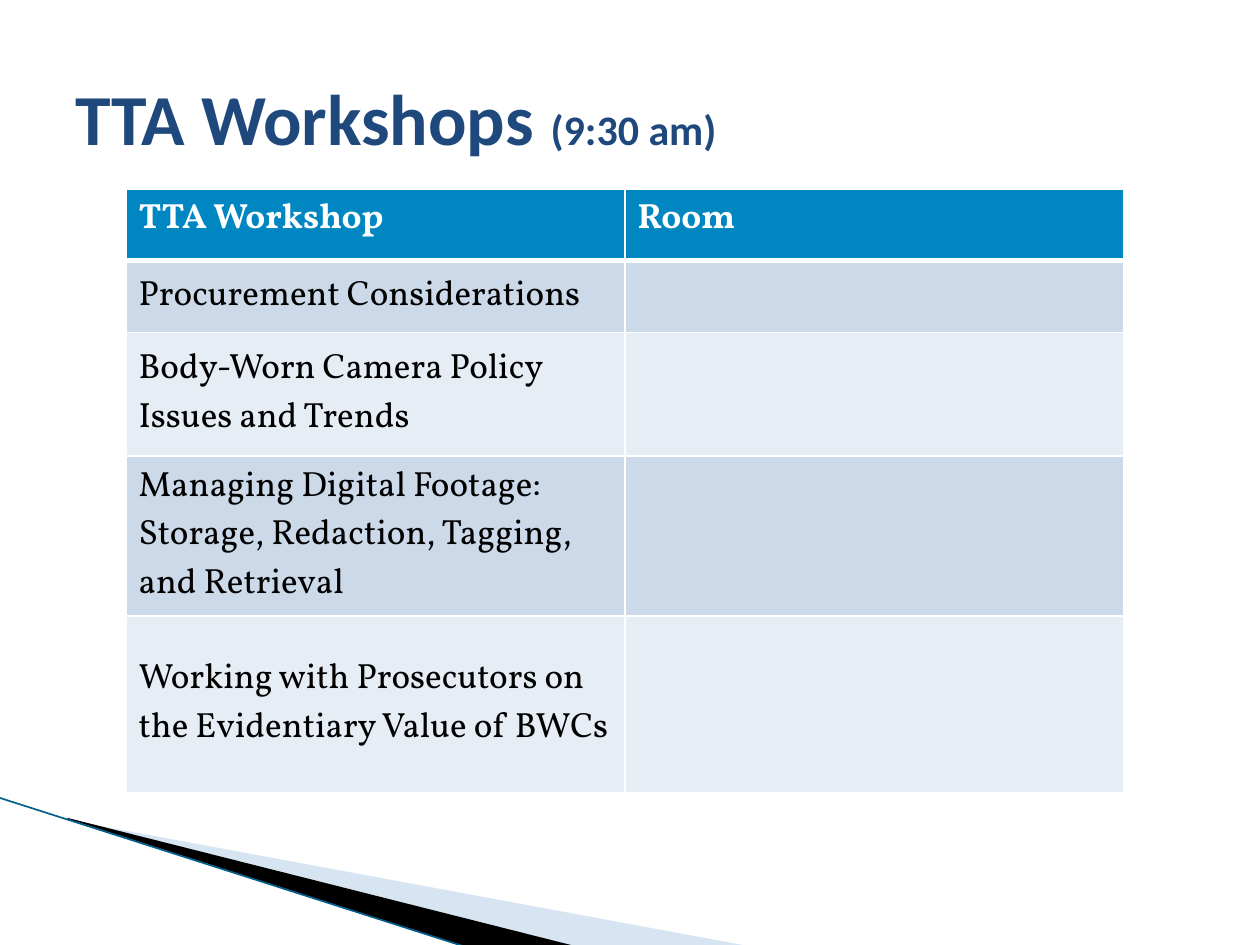
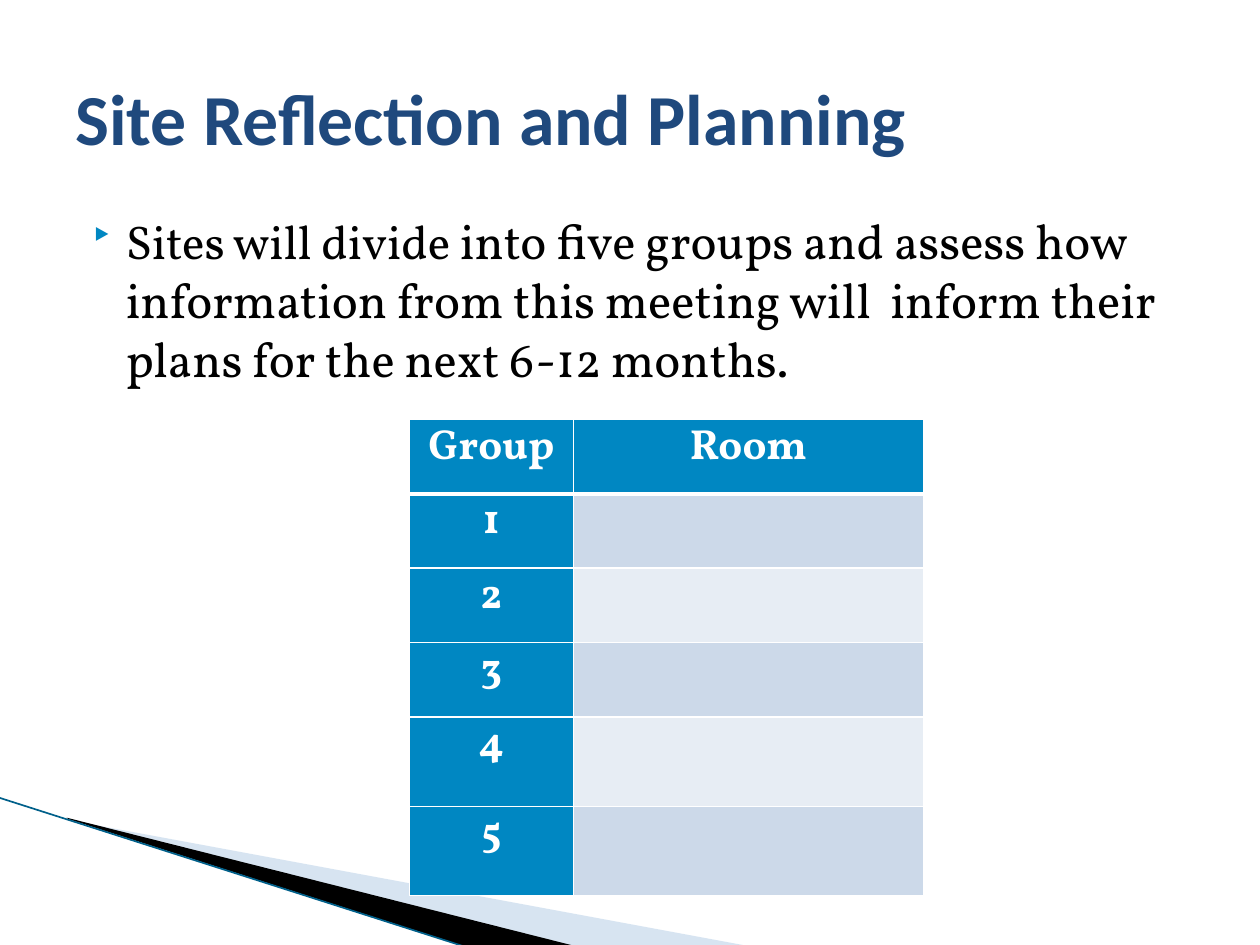
from lxml import etree
from pptx import Presentation
from pptx.dml.color import RGBColor
from pptx.enum.shapes import MSO_CONNECTOR
from pptx.enum.text import MSO_ANCHOR, PP_ALIGN
from pptx.oxml.ns import qn
from pptx.util import Inches, Pt

TOP, MIDDLE = MSO_ANCHOR.TOP, MSO_ANCHOR.MIDDLE
LEFT, CENTER = PP_ALIGN.LEFT, PP_ALIGN.CENTER
STRAIGHT = MSO_CONNECTOR.STRAIGHT

COLORS = {
    "title": "1F497D",
    "accent": "0087C2",
    "band_dark": "CCD9E9",
    "band_light": "E7EDF4",
    "wedge": "9DBDDE",
    "edge": "00608A",
    "black": "000000",
    "white": "FFFFFF",
}
TITLE_FONT, BODY_FONT = "Calibri", "Vollkorn"

WORKSHOPS = [
    "Procurement Considerations",
    "Body-Worn Camera Policy Issues and Trends",
    "Managing Digital Footage: Storage, Redaction, Tagging, and Retrieval",
    "Working with Prosecutors on the Evidentiary Value of BWCs",
]


def rgb(name):
    return RGBColor.from_string(COLORS[name])


def add_run(paragraph, text, color, **font_format):
    run = paragraph.add_run()
    run.text = text
    for attribute, value in font_format.items():
        setattr(run.font, attribute, value)
    run.font.color.rgb = rgb(color)


def add_text_box(slide, left, top, width, height, anchor):
    """Add a wrapping text box and return its first paragraph."""
    shape = slide.shapes.add_textbox(*map(Inches, (left, top, width, height)))
    shape.text_frame.word_wrap = True
    shape.text_frame.vertical_anchor = anchor
    return shape.text_frame.paragraphs[0]


def add_title(slide, title, detail=""):
    paragraph = add_text_box(slide, 0.5, 0.3, 9, 1.25, MIDDLE)
    for text, size in ((title, 41), (detail, 24)):
        if text:
            add_run(paragraph, text, "title", name=TITLE_FONT, size=Pt(size), bold=True)


def add_bullet(paragraph):
    properties = paragraph._p.get_or_add_pPr()
    properties.set("marL", str(Inches(0.4)))
    properties.set("indent", str(Inches(-0.28)))
    bullet_color = etree.SubElement(properties, qn("a:buClr"))
    etree.SubElement(bullet_color, qn("a:srgbClr"), val=COLORS["accent"])
    etree.SubElement(properties, qn("a:buSzPct"), val="80000")
    etree.SubElement(properties, qn("a:buChar"), char="‣")


def add_polygon(slide, points, color, opacity=100):
    corners = [(Inches(x), Inches(y)) for x, y in points]
    builder = slide.shapes.build_freeform(*corners[0])
    builder.add_line_segments(corners[1:], close=True)
    shape = builder.convert_to_shape()
    shape.shadow.inherit = False
    shape.line.fill.background()
    shape.fill.solid()
    shape.fill.fore_color.rgb = rgb(color)
    if opacity < 100:
        color_element = shape._element.spPr.find(".//" + qn("a:srgbClr"))
        etree.SubElement(color_element, qn("a:alpha"), val=str(opacity * 1000))


def add_corner_sweep(slide):
    """Draw the wedges and the edge line at the lower left."""
    add_polygon(slide, [(0.55, 6.51), (5.95, 7.51), (4.56, 7.51), (0.55, 6.5)], "wedge", 40)
    add_polygon(slide, [(0.53, 6.49), (4.57, 7.51), (3.72, 7.52), (0.54, 6.5)], "black")
    edge = slide.shapes.add_connector(STRAIGHT, *map(Inches, (-0.01, 6.33, 3.71, 7.52)))
    edge.line.color.rgb = rgb("edge")
    edge.line.width = Pt(0.95)
    etree.SubElement(edge._element.spPr, qn("a:effectLst"))


def set_borders(cell, bottom):
    """Give a cell white borders: 1 pt, and the bottom one as given in points."""
    properties = cell._tc.get_or_add_tcPr()
    widths = {"a:lnL": 1, "a:lnR": 1, "a:lnT": 1, "a:lnB": bottom}
    for position, (tag, width) in enumerate(widths.items()):
        border = etree.Element(qn(tag), w=str(Pt(width)))
        fill = etree.SubElement(border, qn("a:solidFill"))
        etree.SubElement(fill, qn("a:srgbClr"), val=COLORS["white"])
        properties.insert(position, border)


def add_room_table(slide, left, top, widths, heights, headers, labels, size,
                   align=LEFT, body_anchor=TOP, accent_labels=False, margins=None):
    """Add a table of labels with an empty room column."""
    rows = [headers] + [(label, "") for label in labels]
    frame = slide.shapes.add_table(
        len(rows), len(widths), Inches(left), Inches(top),
        Inches(sum(widths)), Inches(sum(heights)))
    table = frame.table
    for column, width in zip(table.columns, widths):
        column.width = Inches(width)
    for row, height in zip(table.rows, heights):
        row.height = Inches(height)

    for row_index, texts in enumerate(rows):
        is_header = row_index == 0
        band = "band_dark" if row_index % 2 else "band_light"
        for column_index, text in enumerate(texts):
            cell = table.cell(row_index, column_index)
            is_accent = is_header or (accent_labels and column_index == 0)
            cell.fill.solid()
            cell.fill.fore_color.rgb = rgb("accent" if is_accent else band)
            set_borders(cell, bottom=3 if is_header else 1)
            cell.vertical_anchor = TOP if is_header else body_anchor
            for attribute, value in (margins or {}).items():
                setattr(cell, attribute, Inches(value))
            if text:
                paragraph = cell.text_frame.paragraphs[0]
                paragraph.alignment = align
                add_run(paragraph, text, "white" if is_accent else "black",
                        name=BODY_FONT, size=Pt(size), bold=is_accent)


def add_base_slide(presentation):
    slide = presentation.slides.add_slide(presentation.slide_layouts[6])
    add_corner_sweep(slide)
    return slide


def add_workshops_slide(presentation):
    slide = add_base_slide(presentation)
    add_title(slide, "TTA Workshops ", "(9:30 am)")
    add_room_table(
        slide, 1, 1.5, [3.96] * 2, [0.57, 0.57, 0.98, 1.27, 1.4],
        ("TTA Workshop", "Room"), WORKSHOPS, 20, body_anchor=MIDDLE)


def add_planning_slide(presentation):
    slide = add_base_slide(presentation)
    paragraph = add_text_box(slide, 0.5, 1.62, 9, 4.95, TOP)
    add_bullet(paragraph)
    add_run(paragraph, "Sites will divide ", "black", name=BODY_FONT, size=Pt(27))
    add_run(paragraph, "into five groups and assess how information from this meeting "
            "will  inform their plans for the next 6-12 months.",
            "black", name=BODY_FONT, size=Pt(28))
    add_title(slide, "Site Reflection and Planning")
    add_room_table(
        slide, 3.25, 3.33, [1.3, 2.78], [0.59] * 4 + [0.71] * 2,
        ("Group", "Room"), [str(group) for group in range(1, 6)], 24,
        align=CENTER, accent_labels=True,
        margins={"margin_left": 0.07, "margin_right": 0.07,
                 "margin_top": 0, "margin_bottom": 0})


def main():
    presentation = Presentation()
    presentation.slide_width = Inches(10)
    presentation.slide_height = Inches(7.5)
    add_workshops_slide(presentation)
    add_planning_slide(presentation)
    presentation.save("out.pptx")


if __name__ == "__main__":
    main()
